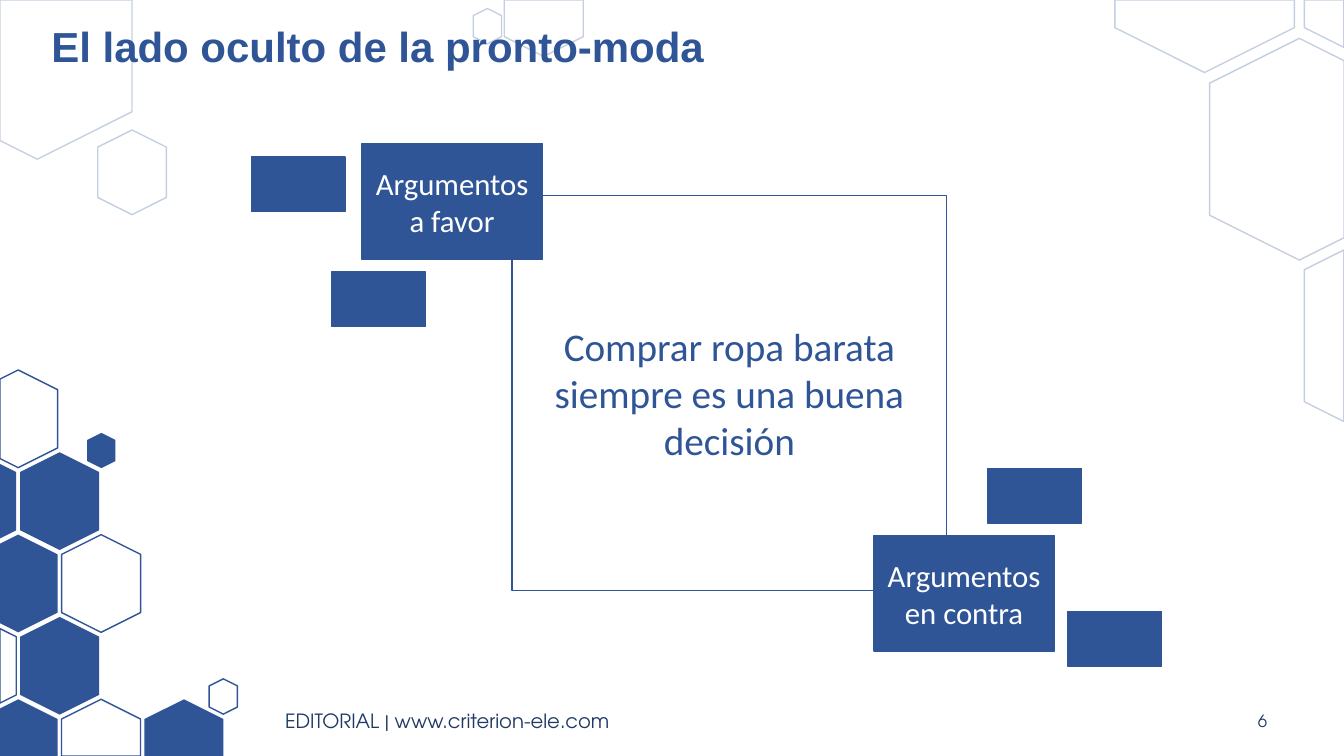
import pptx
import pptx.util
import pptx.dml.color
import pptx.enum.shapes
import pptx.enum.text
import pptx.oxml.ns
import lxml.etree

Pt = pptx.util.Pt
RGB = pptx.dml.color.RGBColor.from_string
MSO = pptx.enum.shapes.MSO_SHAPE
PP = pptx.enum.text.PP_ALIGN
THEME = {
    "blue": RGB("2F5597"), "navy": RGB("203864"), "white": RGB("FFFFFF"),
    "head": "Arial", "body": "Calibri", "foot": "TeX Gyre Adventor",
    "title": Pt(30), "claim": Pt(28), "side": Pt(22), "footer": Pt(14), "number": Pt(12),
}
W, H = 960, 540

prs = pptx.Presentation()
prs.slide_width, prs.slide_height = Pt(W), Pt(H)
s = prs.slides.add_slide(prs.slide_layouts[5])


def add_hexagon(cx, cy, w, h, style):
    """Pointy-top hexagon; where it runs off the slide it is cut at the edge."""
    x, y, rise = w / 2, h / 2, w / 4
    pts = [(cx, cy - y), (cx + x, cy - y + rise), (cx + x, cy + y - rise),
           (cx, cy + y), (cx - x, cy + y - rise), (cx - x, cy - y + rise)]
    if cx >= x and cx + x <= W and cy >= y and cy + y <= H:
        sp = s.shapes.add_shape(MSO.HEXAGON, Pt(cx - y), Pt(cy - x), Pt(h), Pt(w))
        sp.rotation = 90
    else:
        for axis, limit, sign in ((0, 0, 1), (0, W, -1), (1, 0, 1), (1, H, -1)):
            cut = []
            for a, b in zip(pts, pts[1:] + pts[:1]):
                da, db = sign * (a[axis] - limit), sign * (b[axis] - limit)
                if da >= 0:
                    cut.append(a)
                if da * db < 0:
                    t = da / (da - db)
                    cut.append((a[0] + t * (b[0] - a[0]), a[1] + t * (b[1] - a[1])))
            pts = cut
        pts = [(Pt(px), Pt(py)) for px, py in pts]
        fb = s.shapes.build_freeform(*pts[0])
        fb.add_line_segments(pts[1:], close=True)
        sp = fb.convert_to_shape()
    sp.shadow.inherit = False
    sp.fill.solid()
    sp.fill.fore_color.rgb = THEME["blue" if style == "solid" else "white"]
    if style == "solid":
        sp.line.fill.background()
        return
    sp.line.color.rgb = THEME["blue"]
    sp.line.width = Pt(1)
    if style == "faint":
        clr = sp.line._get_or_add_ln().find(".//" + pptx.oxml.ns.qn("a:srgbClr"))
        lxml.etree.SubElement(clr, pptx.oxml.ns.qn("a:alpha"), val="28000")


def set_text(sp, text, size, font, color, align):
    tf = sp.text_frame
    tf.word_wrap = True
    tf.auto_size = pptx.enum.text.MSO_AUTO_SIZE.NONE
    tf.vertical_anchor = pptx.enum.text.MSO_ANCHOR.MIDDLE
    p = tf.paragraphs[0]
    p.text, p.alignment = text, align
    p.font.size, p.font.name, p.font.color.rgb = THEME[size], THEME[font], THEME[color]
    return p


# Faint hexagons along the top and right
for cx, cy, w, h in (
    (348.1, 18.7, 20.2, 25.2), (388.4, 5.4, 56.4, 69.8),
    (860.4, -27.4, 128.2, 158.4), (995.8, -27.4, 128.2, 158.4),
    (928.1, 106.6, 128.2, 158.4), (995.8, 239.8, 128.2, 158.4),
    (26.6, 30.2, 135.4, 167), (94.3, 123.1, 49, 60.5),
):
    add_hexagon(cx, cy, w, h, "faint")

# Honeycomb at bottom left, by half column and row
for col, row, style in (
    (0, 0, "outline"), (-1, 1, "solid"), (1, 1, "solid"),
    (0, 2, "solid"), (2, 2, "outline"), (-1, 3, "outline"), (1, 3, "solid"),
    (0, 4, "solid"), (2, 4, "outline"), (4, 4, "solid"),
):
    add_hexagon(13 + 29.6 * col, 299.2 + 58.8 * row, 56.4, 69.8, style)
add_hexagon(159.5, 497.5, 20.2, 25.2, "outline")
add_hexagon(72.4, 321.8, 20.2, 25.2, "solid")

# Footer and slide number
for x, w, text, size, align in (
    (196.6, 470.2, "EDITORIAL | www.criterion-ele.com", "footer", PP.LEFT),
    (841, 71.3, "6", "number", PP.RIGHT),
):
    sp = s.shapes.add_textbox(Pt(x), Pt(500.4), Pt(w), Pt(28.8))
    set_text(sp, text, size, "foot", "navy", align)

# Title, brought in front of the hexagons
title = s.shapes.title
title.left, title.top, title.width, title.height = Pt(29.5), Pt(13), Pt(832.3), Pt(43.2)
p = set_text(title, "El lado oculto de la pronto-moda", "title", "head", "blue", PP.LEFT)
p.font.bold = True
p.line_spacing = 0.9
s.shapes.element.append(title.element)

# Claim, the two sides of the argument, and blank cards
cards = [(x, y, 67, 38.9, "", "side", "blue")
         for x, y in ((236.9, 194.4), (179.6, 112.3), (762.5, 437), (705.6, 334.8))]
for x, y, w, h, text, size, fill in [
    (365.8, 139.7, 310.3, 282.2, "Comprar ropa barata siempre es una buena decisión", "claim", "white"),
    (258.5, 102.6, 128.9, 82.8, "Argumentos a favor", "side", "blue"),
    (624.2, 382.3, 128.9, 82.8, "Argumentos en contra", "side", "blue"),
] + cards:
    sp = s.shapes.add_shape(MSO.RECTANGLE, Pt(x), Pt(y), Pt(w), Pt(h))
    sp.shadow.inherit = False
    sp.fill.solid()
    sp.fill.fore_color.rgb = THEME[fill]
    sp.line.color.rgb = THEME["blue"]
    sp.line.width = Pt(1)
    if text:
        set_text(sp, text, size, "body", "blue" if fill == "white" else "white", PP.CENTER)

prs.save("out.pptx")
